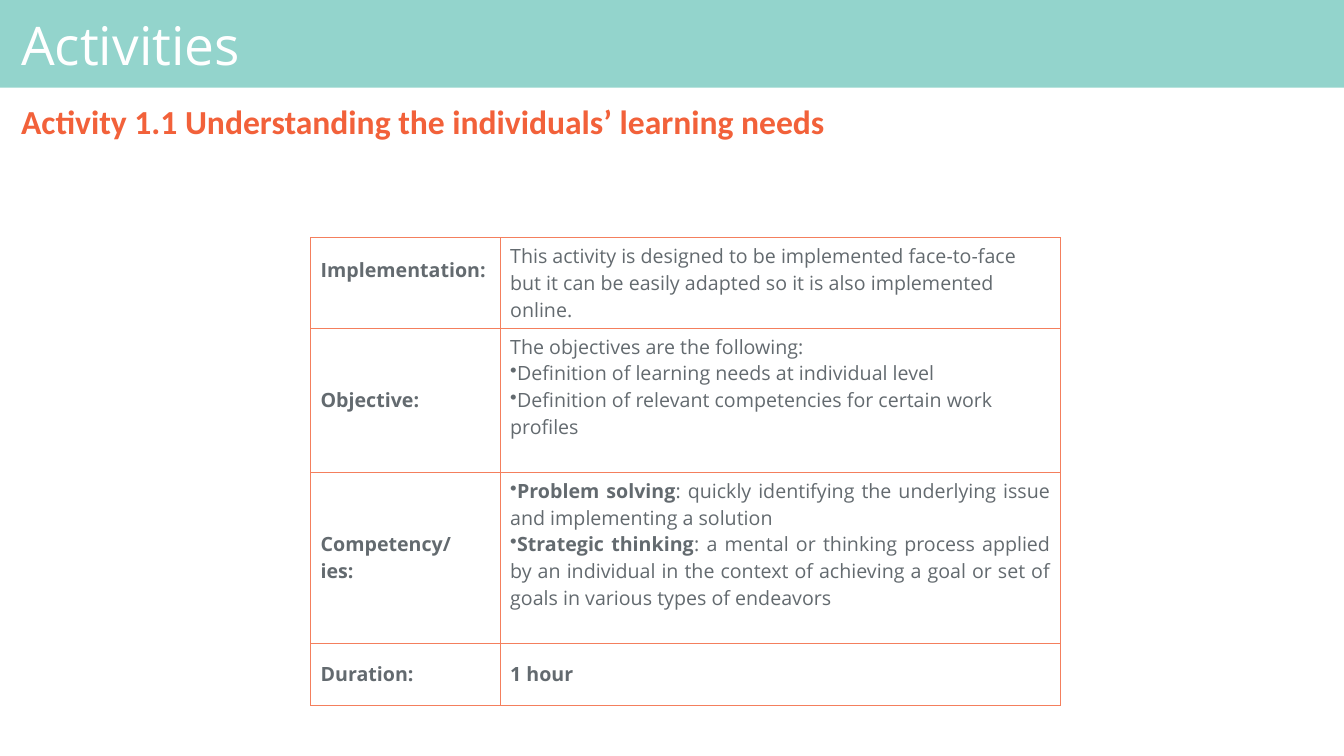
from pptx import Presentation
from pptx.dml.color import RGBColor
from pptx.enum.shapes import MSO_SHAPE as Shape
from pptx.enum.text import MSO_ANCHOR as Anchor, MSO_AUTO_SIZE as AutoSize, PP_ALIGN as Align
from pptx.oxml.ns import qn
from pptx.util import Inches, Pt
from lxml.etree import SubElement

COLORS = {"band": "93D4CC", "title": "FFFFFF", "heading": "F2613A",
          "text": "636A6F", "border": "F47F5D"}
LINE_HEIGHT = 0.27
COLUMN_WIDTHS = (1.88, 5.56)

# Label, right inset and spare lines of the label, then spare lines and paragraphs of the detail.
# A paragraph is (kind, spans) and a span is (wording, bold).
ROWS = [
    (0.89, ("Implementation:", 0.05, 1), 0, [
        ("plain", [("This activity is designed to be implemented face-to-face but it can be "
                    "easily adapted so it is also implemented online.", False)])]),
    (1.43, ("Objective:", 0.1, 0), 1, [
        ("plain", [("The objectives are the following:", False)]),
        ("bullet", [("Definition of learning needs at individual level", False)]),
        ("bullet", [("Definition of relevant competencies for certain work profiles", False)])]),
    (1.69, ("Competency/ies:", 0.35, 0), 1, [
        ("justified bullet", [
            ("Problem solving", True),
            (": quickly identifying the underlying issue and implementing a solution", False)]),
        ("justified bullet", [
            ("Strategic thinking", True),
            (": a mental or thinking process applied by an individual in the context of "
             "achieving a goal or set of goals in various types of endeavors", False)])]),
    (0.62, ("Duration:", 0.1, 0), 0, [("plain", [("1 hour", True)])]),
]


def rgb(name):
    return RGBColor.from_string(COLORS[name])


def add_span(para, wording, size=14, font="Open Sans", color="text", bold=False):
    span = para.add_run()
    span.text = wording
    span.font.size = Pt(size)
    span.font.name = font
    span.font.bold = bold
    span.font.color.rgb = rgb(color)


def set_bullet(para, indent=0, mark=None):
    """Set a hanging mark, or turn the inherited one off."""
    props = para._p.get_or_add_pPr()
    props.set("marL", "0")
    props.set("indent", str(Inches(indent)))
    if mark:
        color = SubElement(props, qn("a:buClr"))
        SubElement(color, qn("a:srgbClr"), val=COLORS["text"])
        SubElement(props, qn("a:buChar"), char=mark)
    else:
        SubElement(props, qn("a:buNone"))


def fill_placeholder(box, area, wording, insets, align, **style):
    box.left, box.top, box.width, box.height = map(Inches, area)
    frame = box.text_frame
    frame.word_wrap = True
    frame.auto_size = AutoSize.NONE
    frame.vertical_anchor = Anchor.MIDDLE
    frame.margin_left, frame.margin_top, frame.margin_right, frame.margin_bottom = map(
        Inches, insets)
    para = frame.paragraphs[0]
    para.alignment = align
    para.line_spacing = 0.9
    para.space_before = Pt(0)
    set_bullet(para)
    add_span(para, wording, **style)


def add_header(page, left, top, width):
    band = page.shapes.add_shape(Shape.RECTANGLE, Inches(left), Inches(top),
                                 Inches(width), Inches(0.87))
    band.shadow.inherit = False
    band.fill.solid()
    band.fill.fore_color.rgb = rgb("band")
    band.line.fill.background()
    page.shapes._spTree.insert(2, band._element)  # behind the title

    text_left, text_width = left + 0.11, width - 0.27
    fill_placeholder(page.shapes.title, (text_left, top + 0.09, text_width, 0.78), "Activities",
                     (0.1, 0.06, 0.06, 0.06), Align.LEFT, size=38, color="title")
    fill_placeholder(page.placeholders[1], (text_left, top + 0.93, text_width, 0.6),
                     "Activity 1.1 Understanding the individuals’ learning needs",
                     (0.1, 0.05, 0.1, 0.05), Align.JUSTIFY,
                     size=24, font="Calibri", color="heading", bold=True)


def format_cell(cell, right=0.1, spare_lines=0):
    """Give borders, no fill and insets; spare lines lift the text."""
    cell.vertical_anchor = Anchor.MIDDLE
    cell.margin_left, cell.margin_right = Inches(0.1), Inches(right)
    cell.margin_top = Inches(0.05)
    cell.margin_bottom = Inches(0.05 + spare_lines * LINE_HEIGHT)
    props = cell._tc.get_or_add_tcPr()
    for side in ("lnL", "lnR", "lnT", "lnB"):
        line = SubElement(props, qn(f"a:{side}"), w=str(Pt(0.75)))
        SubElement(SubElement(line, qn("a:solidFill")), qn("a:srgbClr"), val=COLORS["border"])
    cell.fill.background()


def write_detail(cell, paragraphs):
    frame = cell.text_frame
    for index, (kind, spans) in enumerate(paragraphs):
        para = frame.add_paragraph() if index else frame.paragraphs[0]
        para.alignment = Align.JUSTIFY if "justified" in kind else Align.LEFT
        if "bullet" in kind:
            set_bullet(para, indent=-0.1, mark="•")
        for wording, bold in spans:
            add_span(para, wording, bold=bold)


def add_activity_table(page, left, top):
    height = sum(row[0] for row in ROWS)
    table = page.shapes.add_table(len(ROWS), 2, Inches(left), Inches(top),
                                  Inches(sum(COLUMN_WIDTHS)), Inches(height)).table
    table.first_row = table.horz_banding = False
    for column, width in zip(table.columns, COLUMN_WIDTHS):
        column.width = Inches(width)
    for row, (height, (label, right, lift), spare_lines, paragraphs) in zip(table.rows, ROWS):
        row.height = Inches(height)
        label_cell, detail_cell = row.cells
        format_cell(label_cell, right, lift)
        add_span(label_cell.text_frame.paragraphs[0], label, bold=True)
        format_cell(detail_cell, spare_lines=spare_lines)
        write_detail(detail_cell, paragraphs)


def main():
    deck = Presentation()
    deck.slide_width, deck.slide_height = Inches(13.33), Inches(7.5)
    page = deck.slides.add_slide(deck.slide_layouts[1])
    add_header(page, 0, 0, 13.33)
    add_activity_table(page, 3.08, 2.36)
    deck.save("out.pptx")


if __name__ == "__main__":
    main()
